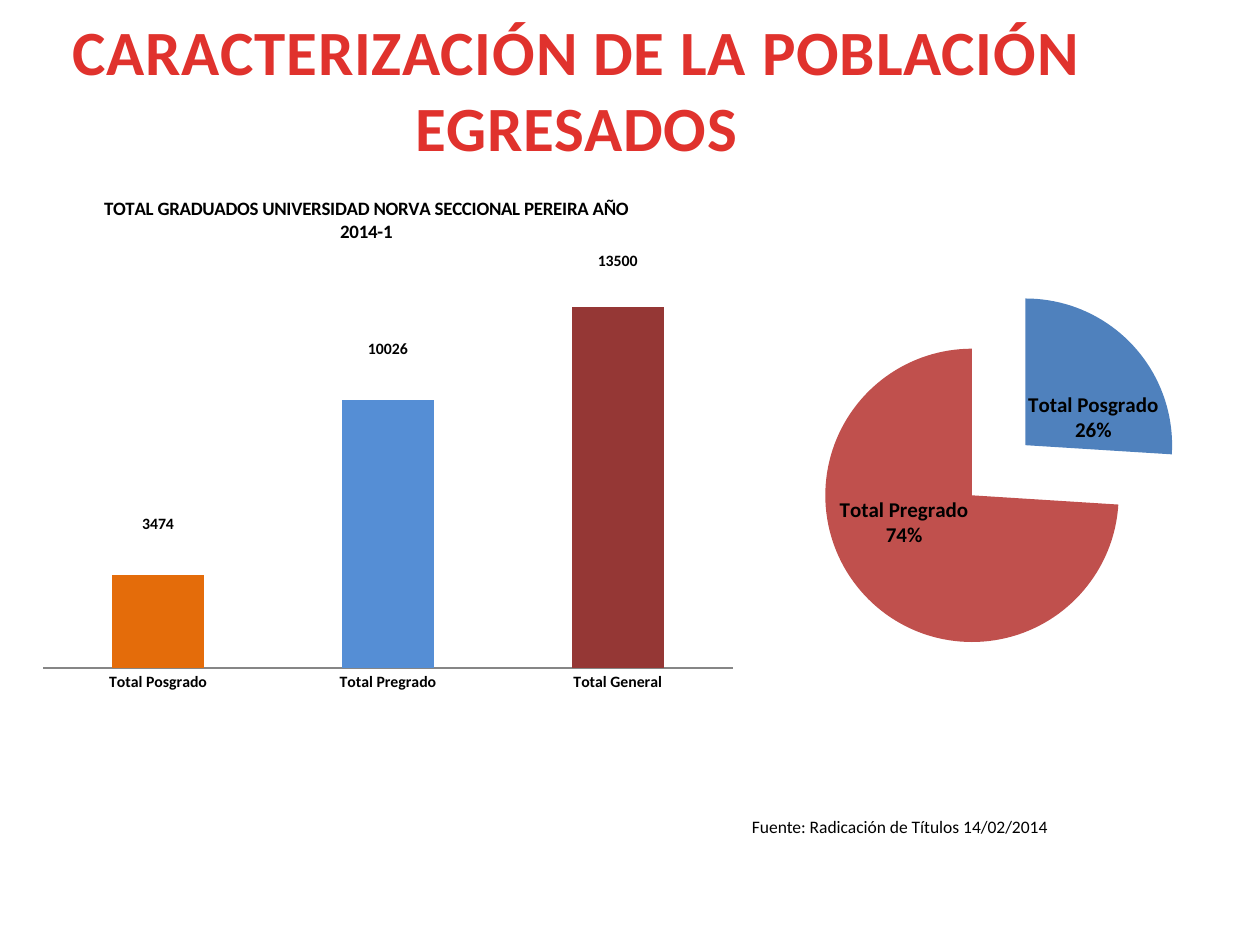
from lxml import etree
from pptx import Presentation
from pptx.chart.data import CategoryChartData
from pptx.dml.color import RGBColor
from pptx.enum.chart import XL_CHART_TYPE, XL_LABEL_POSITION, XL_TICK_MARK
from pptx.enum.shapes import MSO_SHAPE
from pptx.enum.text import MSO_ANCHOR, MSO_AUTO_SIZE, PP_ALIGN
from pptx.oxml.ns import qn
from pptx.util import Cm, Pt

COLUMNS = XL_CHART_TYPE.COLUMN_CLUSTERED
PIE = XL_CHART_TYPE.PIE
OUTSIDE = XL_LABEL_POSITION.OUTSIDE_END
CENTRE_LABEL = XL_LABEL_POSITION.CENTER
NO_TICK = XL_TICK_MARK.NONE
RECTANGLE = MSO_SHAPE.RECTANGLE
TOP = MSO_ANCHOR.TOP
NO_FIT = MSO_AUTO_SIZE.NONE
LEFT, CENTRE = PP_ALIGN.LEFT, PP_ALIGN.CENTER

FONT = "Calibri"
BLACK, WHITE, RED, AXIS_GREY = "000000", "FFFFFF", "E0322D", "868686"
TITLE_ONLY = 5


def colour(hex_code):
    return RGBColor.from_string(hex_code)


def style_font(font, size, bold=False, ink=BLACK):
    font.name, font.size, font.bold = FONT, Pt(size), bold
    font.color.rgb = colour(ink)


def write_text(frame, text, size, bold=False, ink=BLACK, align=LEFT,
               wrap=True, spacing=0):
    """Write one paragraph per line of text, with letter spacing in points."""
    frame.auto_size = NO_FIT
    frame.word_wrap = wrap
    frame.vertical_anchor = TOP
    for number, line in enumerate(text.split("\n")):
        paragraph = frame.paragraphs[0] if number == 0 else frame.add_paragraph()
        paragraph.alignment = align
        run = paragraph.add_run()
        run.text = line
        style_font(run.font, size, bold, ink)
        if spacing:
            run.font._element.set("spc", str(int(spacing * 100)))


def place(shape, box):
    shape.left, shape.top, shape.width, shape.height = (Cm(v) for v in box)


def make_layout(inner=False, edge=False, **fractions):
    """Manual chart layout; fractions are x, y, w and h of the chart area."""
    layout = etree.Element(qn("c:layout"))
    manual = etree.SubElement(layout, qn("c:manualLayout"))
    settings = {}
    if inner:
        settings["layoutTarget"] = "inner"
    if inner or edge:
        settings.update(xMode="edge", yMode="edge")
    settings.update(fractions)
    for tag, value in settings.items():
        etree.SubElement(manual, qn(f"c:{tag}")).set("val", str(value))
    return layout


def set_plot_area(chart, x, y, w, h):
    area = chart._chartSpace.chart.plotArea
    for old in area.findall(qn("c:layout")):
        area.remove(old)
    area.insert(0, make_layout(inner=True, x=x, y=y, w=w, h=h))


def add_base_chart(slide, kind, box, shares, size):
    """shares holds (category, value, colour) for each point."""
    data = CategoryChartData()
    data.categories = [category for category, _, _ in shares]
    data.add_series("Series 1", [value for _, value, _ in shares])
    chart = slide.shapes.add_chart(kind, *(Cm(v) for v in box), data).chart
    style_font(chart.font, size, bold=True)
    chart.has_legend = False
    chart.has_title = False
    series = chart.plots[0].series[0]
    for number, (_, _, fill) in enumerate(shares):
        point_fill = series.points[number].format.fill
        point_fill.solid()
        point_fill.fore_color.rgb = colour(fill)
    return chart, series


def place_labels(series, position, shifts, shown):
    """Show the named contents at each point, moved by (x, y) fractions."""
    for number in range(len(shifts)):
        series.points[number].data_label.position = position
    for label, (x, y) in zip(series._element.iter(qn("c:dLbl")), shifts):
        label.insert(1, make_layout(x=x, y=y))
        for content in ("showVal", "showCatName", "showPercent"):
            label.find(qn(f"c:{content}")).set("val", str(int(content in shown)))
        etree.SubElement(label, qn("c:separator")).text = "\n"
    for leader_lines in series._element.iter(qn("c:showLeaderLines")):
        leader_lines.set("val", "0")


def add_graduates_columns(slide, box):
    chart, series = add_base_chart(slide, COLUMNS, box, [
        ("Total Posgrado", 3474, "E46C0A"),
        ("Total Pregrado", 10026, "558ED5"),
        ("Total General", 13500, "953735"),
    ], 9)
    chart.plots[0].gap_width = 150
    chart.plots[0].vary_by_categories = False
    place_labels(series, OUTSIDE, [(0, -0.07), (0, -0.07), (0, -0.06)], ["showVal"])

    # Chart title
    chart.has_title = True
    write_text(chart.chart_title.text_frame,
               "TOTAL GRADUADOS UNIVERSIDAD NORVA SECCIONAL PEREIRA AÑO 2014-1",
               10.8, bold=True, align=CENTRE)
    title = chart.chart_title._element
    for old in title.findall(qn("c:layout")):
        title.remove(old)
    title.insert(1, make_layout(edge=True, x=0.1, y=0.03))

    # Axes
    values, categories = chart.value_axis, chart.category_axis
    values.minimum_scale, values.maximum_scale = 0, 16000
    values.has_major_gridlines = False
    values.visible = False
    categories.major_tick_mark = NO_TICK
    categories.format.line.color.rgb = colour(AXIS_GREY)
    set_plot_area(chart, 0.02, 0.12, 0.96, 0.82)


def add_level_pie(slide, box):
    chart, series = add_base_chart(slide, PIE, box, [
        ("Total Posgrado", 26, "4F81BD"),
        ("Total Pregrado", 74, "C0504D"),
    ], 12)
    chart.plots[0].vary_by_categories = True
    place_labels(series, CENTRE_LABEL, [(0.03, 0.04), (-0.03, -0.04)],
                 ["showCatName", "showPercent"])
    # Pull both slices away from the centre
    explosion = etree.Element(qn("c:explosion"))
    explosion.set("val", "25")
    series._element.find(qn("c:dPt")).addprevious(explosion)
    set_plot_area(chart, 0.16, 0.21, 0.76, 0.66)


def add_heading(slide, box):
    place(slide.shapes.title, box)
    write_text(slide.shapes.title.text_frame,
               "CARACTERIZACIÓN DE LA POBLACIÓN\nEGRESADOS",
               36, bold=True, ink=RED, align=CENTRE, wrap=False, spacing=0.5)


def add_source_note(slide, box):
    note = slide.shapes.add_shape(RECTANGLE, *(Cm(v) for v in box))
    note.shadow.inherit = False
    note.fill.solid()
    note.fill.fore_color.rgb = colour(WHITE)
    note.line.fill.background()
    write_text(note.text_frame, "Fuente: Radicación de Títulos 14/02/2014", 10)


def main():
    deck = Presentation()
    deck.slide_width, deck.slide_height = Cm(25.4), Cm(19.05)
    slide = deck.slides.add_slide(deck.slide_layouts[TITLE_ONLY])
    add_heading(slide, (1.09, 0.13, 21.06, 3.33))
    add_graduates_columns(slide, (0.58, 3.58, 14.48, 10.52))
    add_level_pie(slide, (14.88, 3.38, 9.73, 11.3))
    add_source_note(slide, (14.91, 16.33, 10.41, 0.69))
    deck.save("out.pptx")


if __name__ == "__main__":
    main()
